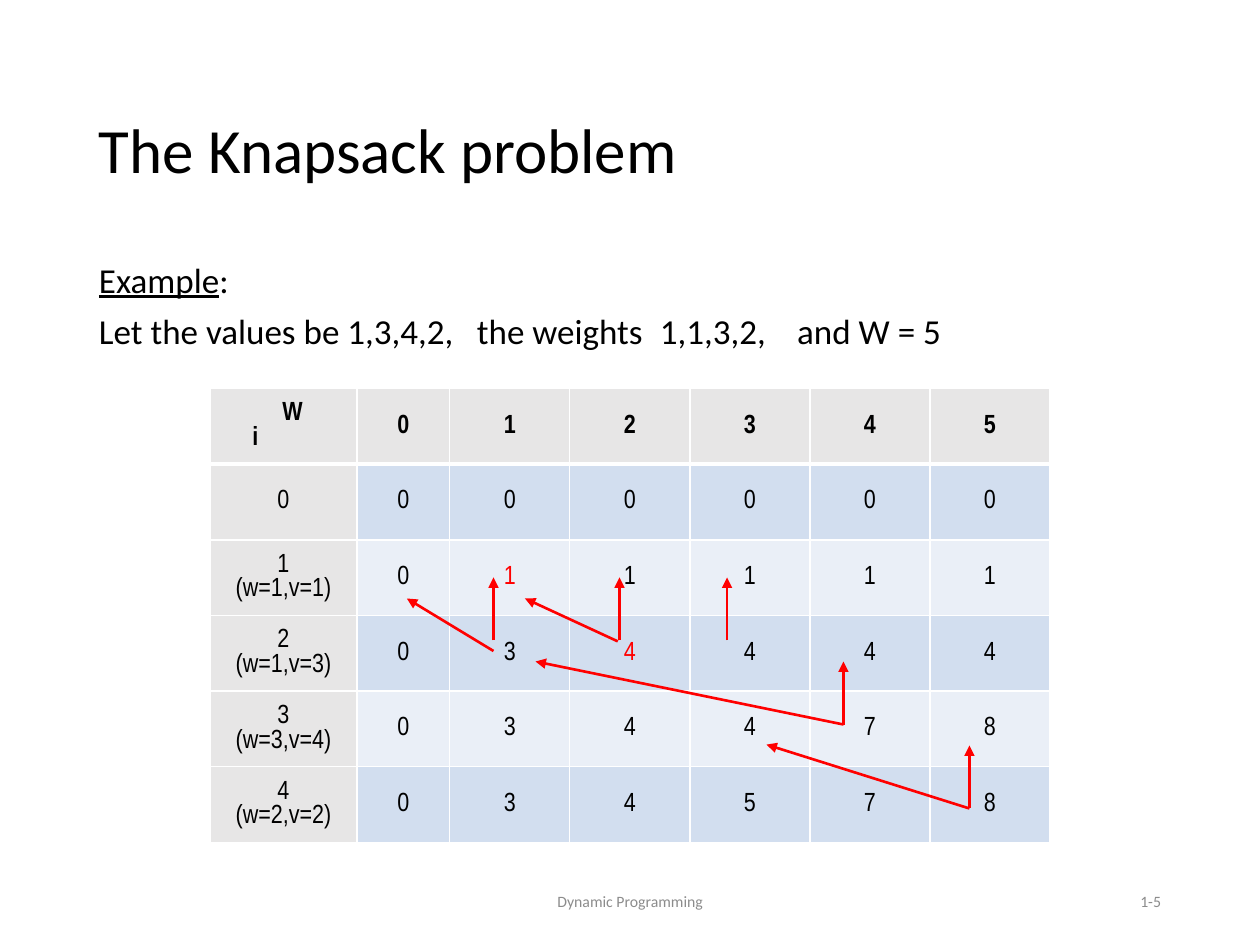
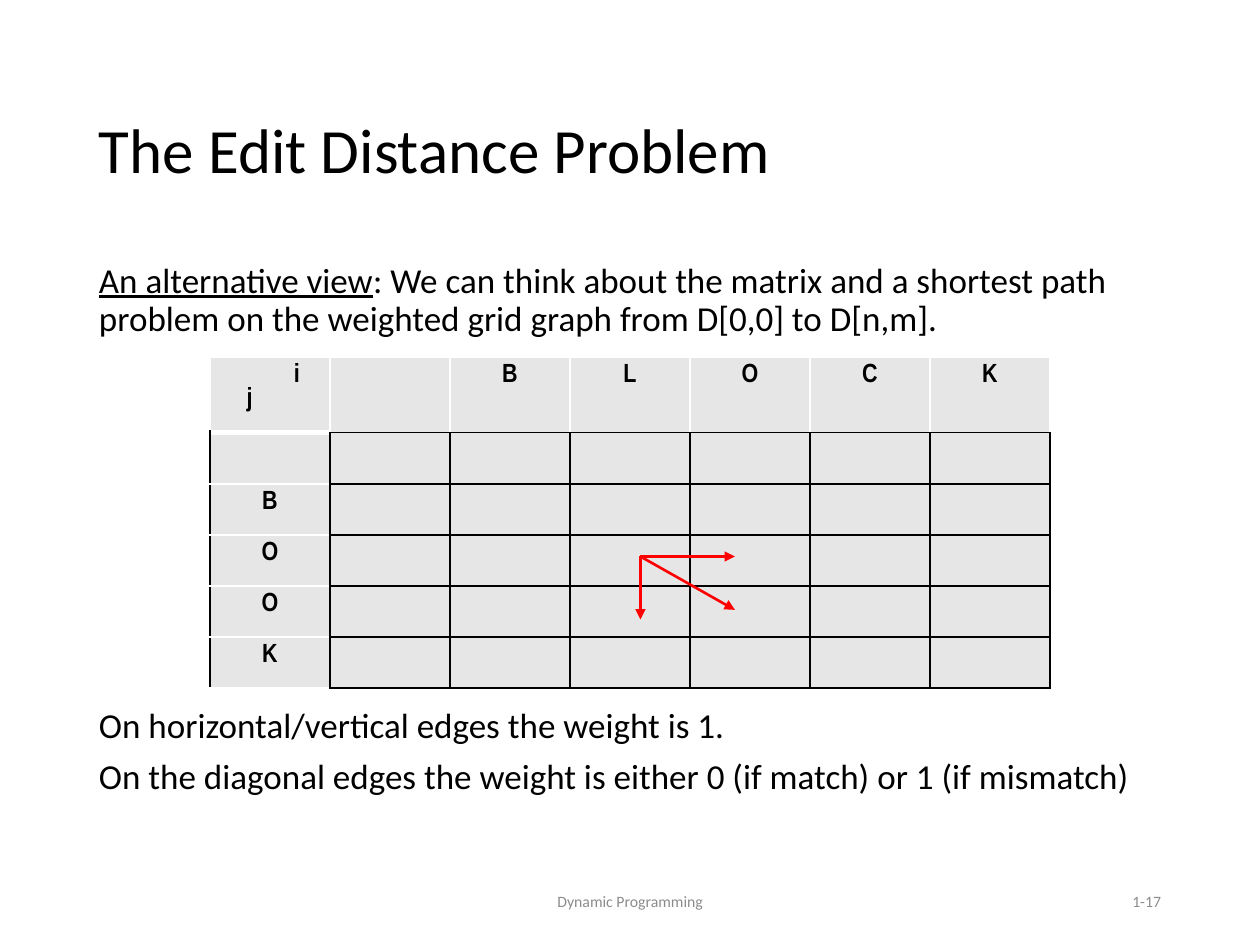
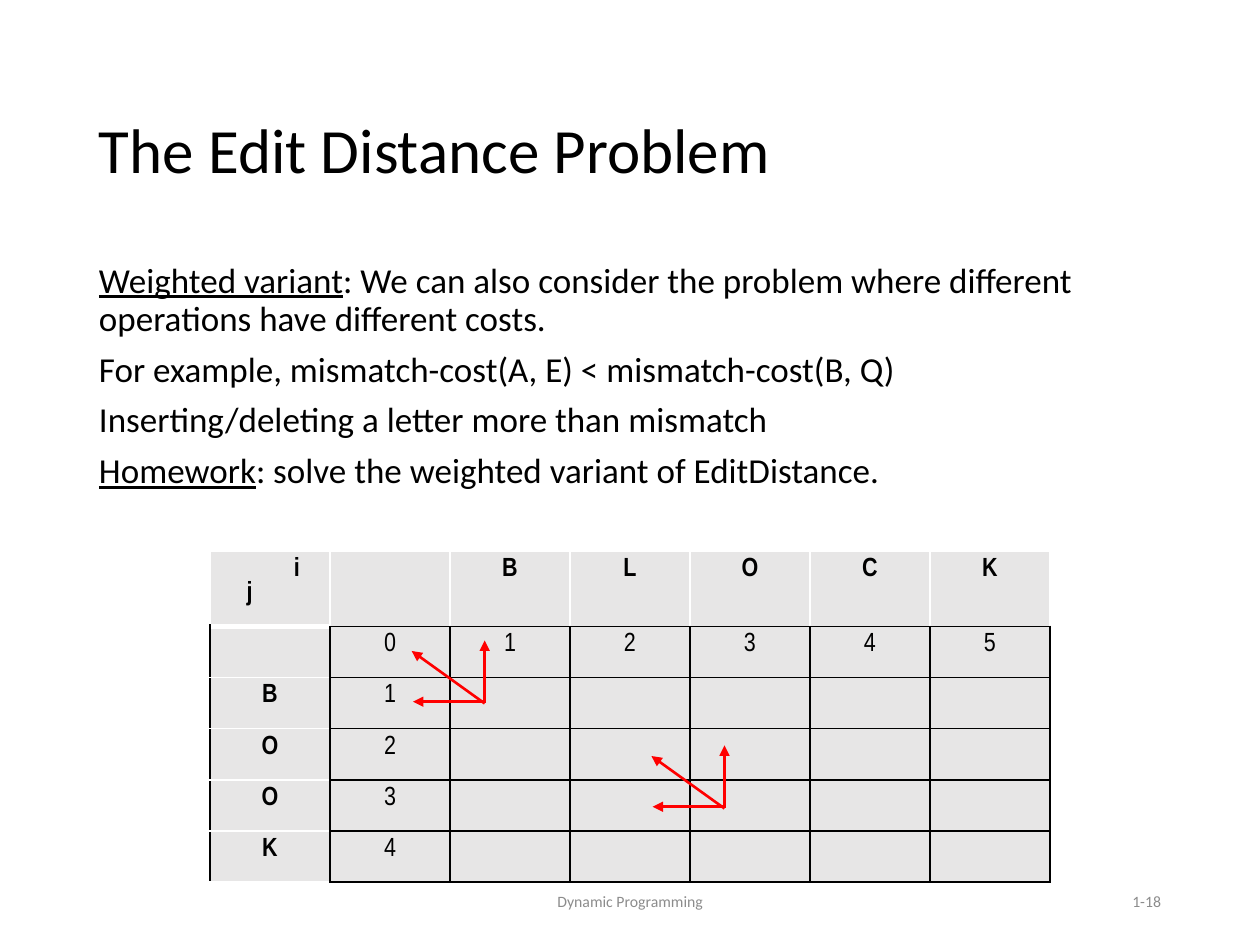
"""Build three dynamic programming slides with score grids and step arrows."""
from lxml.etree import SubElement
from pptx import Presentation
from pptx.dml.color import RGBColor
from pptx.enum.shapes import MSO_CONNECTOR as Connector
from pptx.enum.text import MSO_ANCHOR as Anchor, PP_ALIGN as Align
from pptx.oxml.ns import qn
from pptx.util import Pt

COLORS = {
    "black": "000000",
    "white": "FFFFFF",
    "red": "FF0000",
    "footer": "8C8C8C",
    "header": "E7E6E6",
    "band": "D2DEEF",
    "light": "EAEFF7",
}
BODY_FONT = "Calibri"
GRID_FONT = "Arial Narrow"
MARGIN, CONTENT_WIDTH = 49.5, 621
GRID_LEFT, GRID_WIDTH = 120, 480


def rgb(name):
    return RGBColor.from_string(COLORS[name])


def write(frame, paragraphs, size=20, font=BODY_FONT, color="black", bold=False,
          align=Align.LEFT, anchor=Anchor.TOP, line=None, before=None,
          indents=(), tabs=()):
    """Fill a frame; a tuple paragraph holds an underlined lead and its rest."""
    frame.word_wrap = True
    frame.vertical_anchor = anchor
    for index, content in enumerate(paragraphs):
        paragraph = frame.add_paragraph() if index else frame.paragraphs[0]
        paragraph.alignment = align
        if line:
            paragraph.line_spacing = line
        if before:
            paragraph.space_before = Pt(before)
        properties = paragraph._p.get_or_add_pPr()
        if indents:
            properties.set("marL", str(Pt(indents[index])))
        parts = content if isinstance(content, tuple) else (content,)
        if "\t" in parts[-1]:
            stops = SubElement(properties, qn("a:tabLst"))
            for stop in tabs:
                SubElement(stops, qn("a:tab"), pos=str(Pt(stop)), algn="l")
        for part_index, part in enumerate(parts):
            run = paragraph.add_run()
            run.text = part
            run.font.size = Pt(size)
            run.font.name = font
            run.font.bold = bold
            run.font.underline = len(parts) > 1 and part_index == 0
            run.font.color.rgb = rgb(color)


def draw_edge(cell, side, color, width):
    edge = SubElement(cell._tc.get_or_add_tcPr(), qn(f"a:ln{side}"), w=str(Pt(width)))
    fill = SubElement(edge, qn("a:solidFill"))
    SubElement(fill, qn("a:srgbClr"), val=COLORS[color])


class Deck:
    """Hold the shared style and the slide being built."""

    def __init__(self):
        self.presentation = Presentation()
        self.presentation.slide_width = Pt(720)
        self.presentation.slide_height = Pt(540)
        self.slide = None

    def text(self, left, top, width, height, paragraphs, **style):
        area = self.slide.shapes.add_textbox(Pt(left), Pt(top), Pt(width), Pt(height))
        write(area.text_frame, paragraphs, **style)

    def start(self, title, number):
        layout = self.presentation.slide_layouts[6]
        self.slide = self.presentation.slides.add_slide(layout)
        self.text(MARGIN, 29, CONTENT_WIDTH, 104.5, [title], size=36,
                  anchor=Anchor.MIDDLE, line=1.15, before=6)
        footer = {"size": 9, "color": "footer", "anchor": Anchor.MIDDLE}
        self.text(238.5, 500.5, 243, 28.75, ["Dynamic Programming"],
                  align=Align.CENTER, **footer)
        self.text(508.5, 500.5, 162, 28.75, [number], align=Align.RIGHT, **footer)

    def body(self, paragraphs, top=146.75, height=342.5, tabs=()):
        self.text(MARGIN, top, CONTENT_WIDTH, height, paragraphs,
                  line=0.9, before=7.5, tabs=tabs)

    def grid(self, rows, top, row_height, widths, corner_indents, inner_edge,
             fills, bold_labels, anchor=Anchor.TOP, marked=()):
        frame = self.slide.shapes.add_table(
            len(rows), len(widths), Pt(GRID_LEFT), Pt(top),
            Pt(GRID_WIDTH), Pt(row_height * len(rows)))
        table = frame.table
        table.first_row = table.horz_banding = False
        for column, width in zip(table.columns, widths):
            column.width = Pt(width)
        for r, values in enumerate(rows):
            table.rows[r].height = Pt(row_height)
            for c, value in enumerate(values):
                cell = table.cell(r, c)
                corner = r == c == 0
                write(cell.text_frame, value.split("\n"), size=15, font=GRID_FONT,
                      color="red" if (r, c) in marked else "black",
                      bold=r == 0 or (c == 0 and bold_labels),
                      align=Align.LEFT if corner else Align.CENTER,
                      indents=corner_indents if corner else ())
                cell.vertical_anchor = anchor
                self.edges(cell, r, c, inner_edge)
                cell.fill.solid()
                label = r == 0 or c == 0
                cell.fill.fore_color.rgb = rgb("header" if label else fills[(r - 1) % 2])

    def edges(self, cell, r, c, inner_edge):
        side_color = inner_edge if r else "white"
        bottom_color = inner_edge if c else "white"
        top_color = bottom_color if r else "white"
        header_rule = 3 if bottom_color == "white" else 1
        draw_edge(cell, "L", side_color, 1)
        draw_edge(cell, "R", side_color, 1)
        draw_edge(cell, "T", top_color, header_rule if r == 1 else 1)
        draw_edge(cell, "B", bottom_color, header_rule if r == 0 else 1)

    def letter_grid(self, top, scores):
        rows = [["i\nj", "", *"BLOCK"]]
        rows += [[label, *line] for label, line in zip(["", *"BOOK"], scores)]
        self.grid(rows, top, 29.2, [GRID_WIDTH / 7] * 7, (40.8, 13.7), "black",
                  ("header", "header"), bold_labels=True)

    def arrow(self, start, end):
        step = self.slide.shapes.add_connector(
            Connector.STRAIGHT, *(Pt(value) for value in (*start, *end)))
        step.line.color.rgb = rgb("red")
        step.line.width = Pt(1.5)
        properties = step.element.spPr
        SubElement(properties.find(qn("a:ln")), qn("a:tailEnd"), type="triangle")
        SubElement(properties, qn("a:effectLst"))


def knapsack(deck):
    deck.start("The Knapsack problem", "1-5")
    deck.body([("Example", ":"),
               "Let the values be 1,3,4,2,\tthe weights\t1,1,3,2,\tand W = 5"],
              tabs=(216, 320.5, 399))
    rows = [
        ["W\ni", *"012345"],
        ["0", *"000000"],
        ["1\n(w=1,v=1)", *"011111"],
        ["2\n(w=1,v=3)", *"034444"],
        ["3\n(w=3,v=4)", *"034478"],
        ["4\n(w=2,v=2)", *"034578"],
    ]
    deck.grid(rows, 222, 43.2, [84, 53] + [68.6] * 5, (34.2, 17.1), "white",
              ("band", "light"), bold_labels=False, anchor=Anchor.MIDDLE,
              marked={(2, 2), (3, 3)})
    for start, end in [
        ((482, 414), (306, 378)), ((482, 414), (482, 378)),
        ((353, 366.5), (300, 342)), ((415.5, 366), (415.5, 330)),
        ((554, 462), (438, 425.5)), ((554, 462), (554, 426)),
        ((282, 366), (282, 330)), ((282, 372), (232.5, 342)),
        ((354, 366), (354, 330)),
    ]:
        deck.arrow(start, end)


def shortest_route(deck):
    deck.start("The Edit Distance Problem", "1-17")
    deck.body([("An alternative view",
                ": We can think about the matrix and a shortest path problem "
                "on the weighted grid graph from D[0,0] to D[n,m].")], height=56)
    deck.body(["On horizontal/vertical edges the weight is 1.",
               "On the diagonal edges the weight is either 0 (if match) or 1 (if mismatch)"],
              top=401, height=72)
    deck.letter_grid(204, [[""] * 6] * 5)
    for end in [(420, 348.5), (366, 354), (420, 318)]:
        deck.arrow((366, 318), end)


def weighted_variant(deck):
    deck.start("The Edit Distance Problem", "1-18")
    deck.body([
        ("Weighted variant", ": We can also consider the problem where different "
                             "operations have different costs."),
        "For example, mismatch-cost(A, E) < mismatch-cost(B, Q)",
        "Inserting/deleting a letter more than mismatch",
        ("Homework", ": solve the weighted variant of EditDistance."),
    ])
    deck.letter_grid(314.75, [[*"012345"]] + [[cost] + [""] * 5 for cost in "1234"])
    for x, y in [(277, 402), (414, 462)]:
        deck.arrow((x, y), (x - 41.75, y - 30))
        deck.arrow((x, y), (x, y - 36))
        deck.arrow((x - 1, y - 1), (x - 41, y - 1))


def main():
    deck = Deck()
    knapsack(deck)
    shortest_route(deck)
    weighted_variant(deck)
    deck.presentation.save("out.pptx")


if __name__ == "__main__":
    main()
